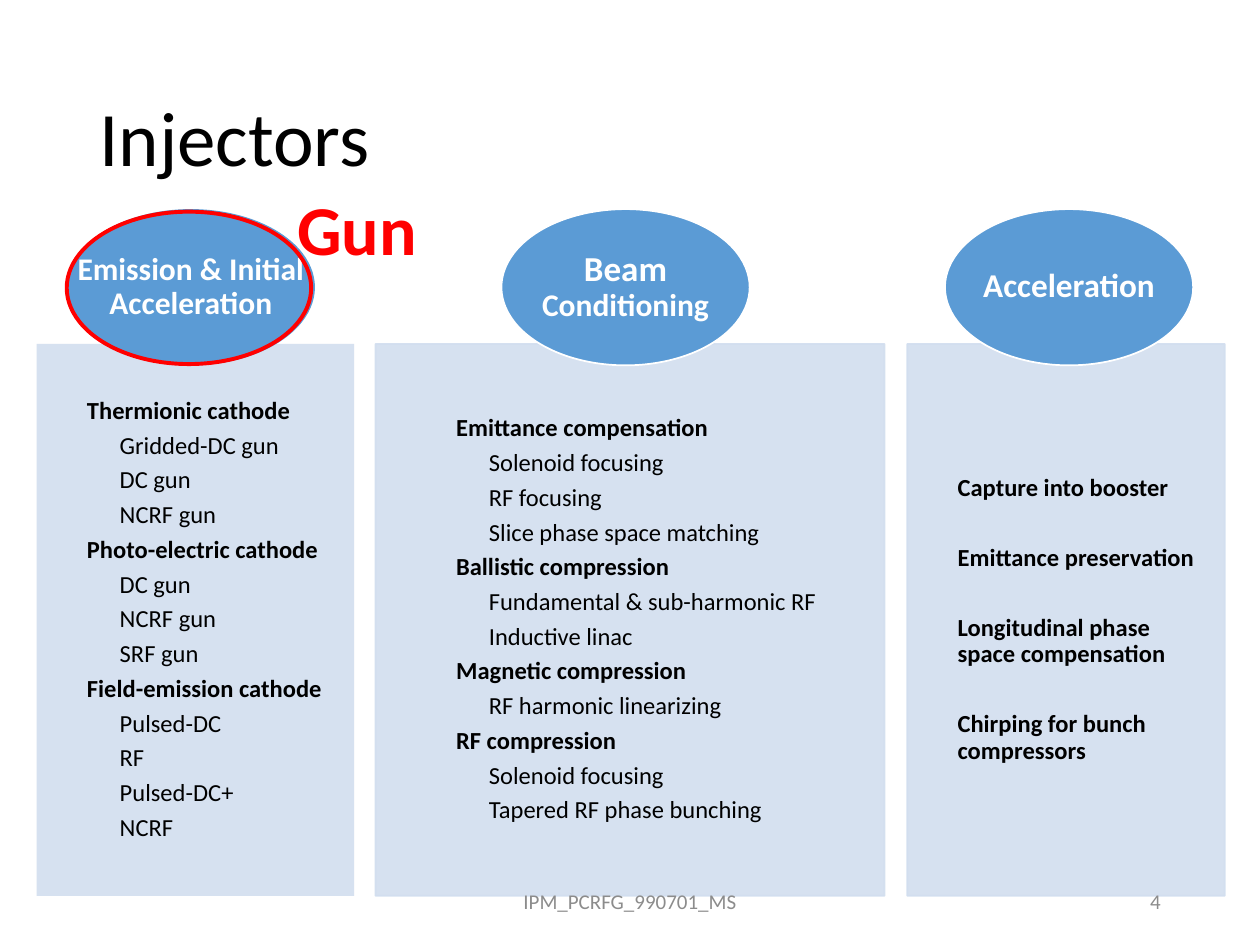
from pptx import Presentation
from pptx.dml.color import RGBColor
from pptx.enum.shapes import MSO_SHAPE
from pptx.enum.text import MSO_ANCHOR, PP_ALIGN
from pptx.oxml.ns import qn
from pptx.util import Inches, Pt
from lxml import etree

RECTANGLE, OVAL = MSO_SHAPE.RECTANGLE, MSO_SHAPE.OVAL
LEFT, CENTER, RIGHT = PP_ALIGN.LEFT, PP_ALIGN.CENTER, PP_ALIGN.RIGHT
MIDDLE, TOP = MSO_ANCHOR.MIDDLE, MSO_ANCHOR.TOP

THEME = {
    "font": "Calibri",
    "black": "000000", "white": "FFFFFF", "red": "FF0000", "gray": "8C8C8C",
    "blue": "5B9BD5", "panel": "D2DEEF", "panel_opacity": 90,
    "title": 44, "callout": 40, "body": 14, "footer": 12,
    "gap": 4.7, "wide_gap": 24.8,
}

COLUMNS = [
    {
        "heading": [("Emission & Initial Acceleration", 18)],
        "panel": (0.29, 2.52), "text": (0.69, 2.11), "oval": 0.53,
        "outlined": False, "gap": THEME["gap"],
        "topics": [
            ("Thermionic cathode", ["Gridded-DC gun", "DC gun", "NCRF gun"]),
            ("Photo-electric cathode", ["DC gun", "NCRF gun", "SRF gun"]),
            ("Field-emission cathode", ["Pulsed-DC", "RF", "Pulsed-DC+", "NCRF"]),
        ],
    },
    {
        "heading": [("Beam ", 20), ("Conditioning", 18)],
        "panel": (2.98, 4.04), "text": (3.62, 3.39), "oval": 3.98,
        "outlined": True, "gap": THEME["gap"],
        "topics": [
            ("Emittance compensation",
             ["Solenoid focusing", "RF focusing", "Slice phase space matching"]),
            ("Ballistic compression",
             ["Fundamental & sub-harmonic RF", "Inductive linac"]),
            ("Magnetic compression", ["RF harmonic linearizing"]),
            ("RF compression", ["Solenoid focusing", "Tapered RF phase bunching"]),
        ],
    },
    {
        "heading": [("Acceleration", 19)],
        "panel": (7.2, 2.52), "text": (7.6, 2.11), "oval": 7.5,
        "outlined": True, "gap": THEME["wide_gap"],
        "topics": [
            ("Capture into booster", []),
            ("Emittance preservation", []),
            ("Longitudinal phase space compensation", []),
            ("Chirping for bunch compressors", []),
        ],
    },
]
PANEL_TOP, PANEL_HEIGHT = 2.73, 4.38
OVAL_TOP, OVAL_WIDTH, OVAL_HEIGHT = 1.66, 1.97, 1.24
INDENT = 0.26


def color(name):
    return RGBColor.from_string(THEME[name])


def set_opacity(fill_parent, percent):
    for tint in fill_parent.iter(qn("a:srgbClr")):
        alpha = etree.SubElement(tint, qn("a:alpha"))
        alpha.set("val", str(percent * 1000))


def add_shape(slide, preset, place, fill=None, line=None, width=1, opacity=None):
    shape = slide.shapes.add_shape(preset, *map(Inches, place))
    shape.shadow.inherit = False
    if fill:
        shape.fill.solid()
        shape.fill.fore_color.rgb = color(fill)
    else:
        shape.fill.background()
    if line:
        shape.line.color.rgb = color(line)
        shape.line.width = Pt(width)
    else:
        shape.line.fill.background()
    if opacity:
        set_opacity(shape._element.spPr, opacity)


def add_box(slide, place, insets=(0.1, 0.05, 0.1, 0.05), anchor=MIDDLE, wrap=True):
    box = slide.shapes.add_textbox(*map(Inches, place))
    frame = box.text_frame
    frame.word_wrap = wrap
    frame.vertical_anchor = anchor
    (frame.margin_left, frame.margin_top,
     frame.margin_right, frame.margin_bottom) = map(Inches, insets)
    return frame


def add_para(frame, spans, ink, bold=False, align=LEFT, spacing=1.0, after=0, indent=0):
    para = frame.paragraphs[0]
    if para.runs:
        para = frame.add_paragraph()
    para.alignment = align
    para.line_spacing = spacing
    para.space_after = Pt(after)
    if indent:
        para._p.get_or_add_pPr().set("marL", str(Inches(indent)))
    for text, size in spans:
        span = para.add_run()
        span.text = text
        span.font.name = THEME["font"]
        span.font.size = Pt(size)
        span.font.bold = bold
        span.font.color.rgb = color(ink)


def add_column(slide, column):
    panel_left, panel_width = column["panel"]
    add_shape(slide, RECTANGLE, (panel_left, PANEL_TOP, panel_width, PANEL_HEIGHT),
              "panel", "panel" if column["outlined"] else None,
              opacity=THEME["panel_opacity"])

    text_left, text_width = column["text"]
    body = add_box(slide, (text_left, PANEL_TOP, text_width, PANEL_HEIGHT),
                   (0, 0.11, 0.11, 0.11))
    lines = [(text, level) for topic, items in column["topics"]
             for text, level in [(topic, 0)] + [(item, 1) for item in items]]
    for number, (text, level) in enumerate(lines, 1):
        after = THEME["gap"] if number == len(lines) else column["gap"]
        add_para(body, [(text, THEME["body"])], "black", bold=level == 0,
                 spacing=0.9, after=after, indent=level * INDENT)

    place = (column["oval"], OVAL_TOP, OVAL_WIDTH, OVAL_HEIGHT)
    add_shape(slide, OVAL, place, "blue", "white" if column["outlined"] else None)
    heading = add_box(slide, place, (0, 0, 0, 0))
    add_para(heading, column["heading"], "white", bold=True, align=CENTER, spacing=0.9)


def main():
    deck = Presentation()
    deck.slide_width, deck.slide_height = Inches(10), Inches(7.5)
    slide = deck.slides.add_slide(deck.slide_layouts[6])

    title = add_box(slide, (0.69, 0.4, 8.62, 1.45))
    add_para(title, [("Injectors", THEME["title"])], "black", spacing=0.9)

    for column in COLUMNS:
        add_column(slide, column)

    callout = add_box(slide, (2.26, 1.42, 1.16, 0.77), anchor=TOP, wrap=False)
    add_para(callout, [("Gun", THEME["callout"])], "red", bold=True)
    add_shape(slide, OVAL, (0.53, 1.68, 1.94, 1.21), line="red", width=2.25)

    for text, left, width, align in [("4", 7.06, 2.25, RIGHT),
                                     ("IPM_PCRFG_990701_MS", 3.31, 3.38, CENTER)]:
        footer = add_box(slide, (left, 6.95, width, 0.4))
        add_para(footer, [(text, THEME["footer"])], "gray", align=align)

    deck.save("out.pptx")


if __name__ == "__main__":
    main()
